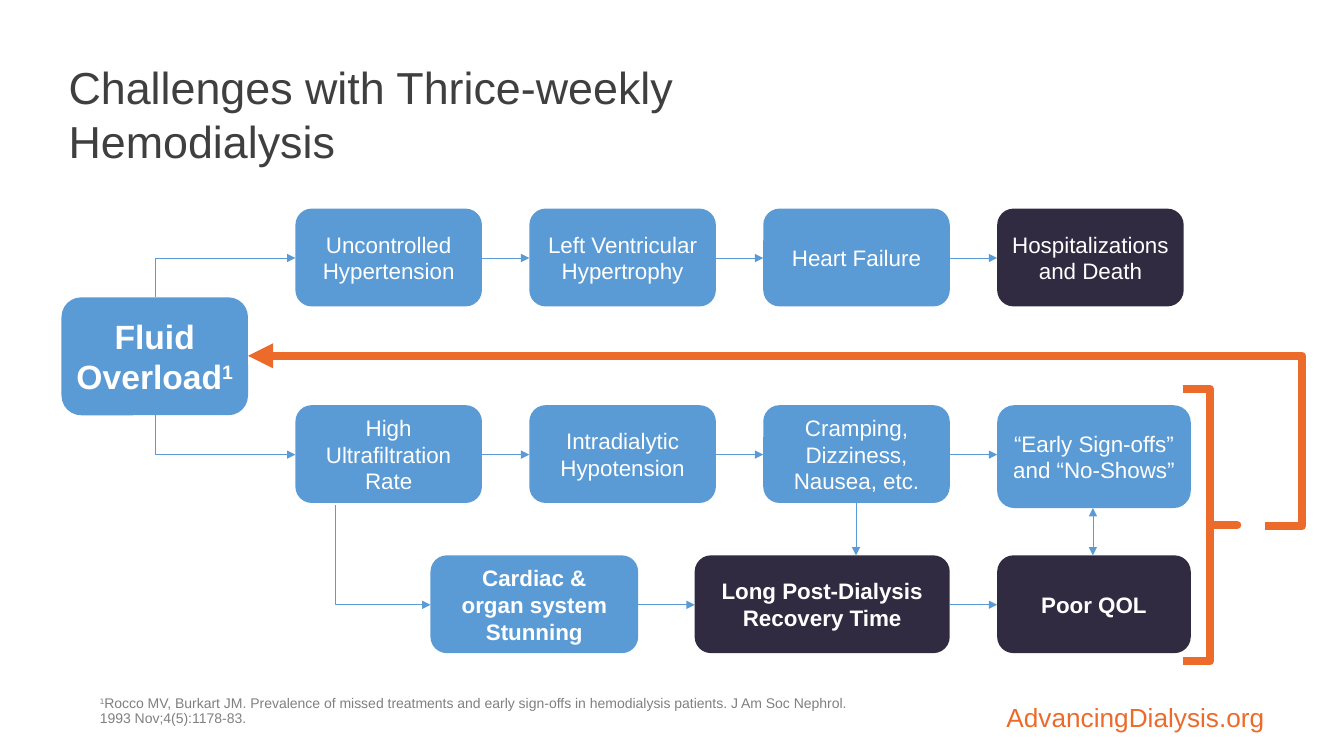
from lxml import etree
from pptx import Presentation
from pptx.dml.color import RGBColor
from pptx.enum import shapes, text
from pptx.oxml.ns import qn
from pptx.util import Inches, Pt

BLUE, DARK, ORANGE, WHITE = "5B9BD5", "312B42", "ED6B2A", "FFFFFF"
BOX_W, BOX_H, PITCH = 1.85, 0.97, 2.32


def rgb(value):
    return RGBColor.from_string(value)


def set_font(r, color, **formats):
    r.font.name = "Arial"
    r.font.color.rgb = rgb(color)
    for name, value in formats.items():
        setattr(r.font, name, value)


def add_runs(p, parts, color, **formats):
    """Add (text, is_superscript) runs to a paragraph."""
    for words, raised in parts:
        r = p.add_run()
        r.text = words
        set_font(r, color, **formats)
        if raised:
            r.font._element.set("baseline", "30000")


def format_frame(tf, anchor, side, edge):
    values = dict(word_wrap=True, vertical_anchor=anchor,
                  margin_left=Inches(side), margin_right=Inches(side),
                  margin_top=Inches(edge), margin_bottom=Inches(edge))
    for name, value in values.items():
        setattr(tf, name, value)


def add_box(s, x, y, w, h, label, fill=BLUE, bold=False, size=16, note=""):
    """Add a rounded box; \\n starts a paragraph and \\v breaks a line."""
    sp = s.shapes.add_shape(shapes.MSO_SHAPE.ROUNDED_RECTANGLE,
                            Inches(x), Inches(y), Inches(w), Inches(h))
    sp.shadow.inherit = False
    sp.fill.solid()
    sp.fill.fore_color.rgb = rgb(fill)
    sp.line.fill.background()
    tf = sp.text_frame
    format_frame(tf, text.MSO_ANCHOR.MIDDLE, 0, 0.05)
    tf.text = label
    for p in tf.paragraphs:
        p.alignment = text.PP_ALIGN.CENTER
        for r in p.runs:
            set_font(r, WHITE, size=Pt(size), bold=bold)
    if note:
        add_runs(p, [(note, True)], WHITE, size=Pt(size), bold=bold)


def add_arrow(s, x1, y1, x2, y2, color=BLUE, width=0.5,
              kind=shapes.MSO_CONNECTOR.STRAIGHT, ends=("tailEnd",)):
    c = s.shapes.add_connector(kind, Inches(x1), Inches(y1), Inches(x2), Inches(y2))
    c.line.color.rgb = rgb(color)
    c.line.width = Pt(width)
    ln = c.line._get_or_add_ln()
    for end in ends:
        etree.SubElement(ln, qn("a:" + end), type="triangle")
    etree.SubElement(c._element.spPr, qn("a:effectLst"))
    return c


def add_corner_arrow(s, x1, y1, x2, y2):
    """Run vertically from the start, then right to the end."""
    w, h = abs(y2 - y1), x2 - x1
    left, top = (x1 + x2 - w) / 2, (y1 + y2 - h) / 2
    c = add_arrow(s, left, top, left + w, top + h, kind=shapes.MSO_CONNECTOR.ELBOW)
    pr = c._element.spPr
    pr.find(qn("a:prstGeom")).set("prst", "bentConnector2")
    xfrm = pr.find(qn("a:xfrm"))
    xfrm.set("flipH", "1")
    if y2 > y1:
        xfrm.set("rot", "16200000")
    else:
        xfrm.set("rot", "5400000")
        xfrm.set("flipV", "1")


def add_flow(s, y, boxes):
    """Add a row of (x, width, height, label, formats) boxes joined by arrows."""
    for x, w, h, label, formats in boxes:
        add_box(s, x, y, w, h, label, **formats)
    for before, after in zip(boxes, boxes[1:]):
        add_arrow(s, before[0] + before[1], y + 0.49, after[0], y + 0.49)


def add_title(s, x, y, w, h):
    sp = s.shapes.title
    sp.left, sp.top, sp.width, sp.height = map(Inches, (x, y, w, h))
    tf = sp.text_frame
    format_frame(tf, text.MSO_ANCHOR.MIDDLE, 0.07, 0.04)
    p = tf.paragraphs[0]
    p.alignment = text.PP_ALIGN.LEFT
    add_runs(p, [("Challenges with Thrice-weekly Hemodialysis", False)],
             "3F3F3F", size=Pt(32))


def add_caption(s, x, y, w, h, parts, color, size, align, anchor, side, edge):
    sp = s.shapes.add_textbox(Inches(x), Inches(y), Inches(w), Inches(h))
    tf = sp.text_frame
    format_frame(tf, anchor, side, edge)
    p = tf.paragraphs[0]
    p.alignment = align
    p.line_spacing = 0.9
    add_runs(p, parts, color, size=Pt(size))


def add_feedback(s, x, y, w, h):
    """Add the bracket round the outcomes and the arrow back to fluid overload."""
    sp = s.shapes.add_shape(shapes.MSO_SHAPE.RIGHT_BRACE,
                            Inches(x), Inches(y), Inches(w), Inches(h))
    sp.shadow.inherit = False
    sp.fill.background()
    sp.line.color.rgb = rgb(ORANGE)
    sp.line.width = Pt(6)
    sp.adjustments[0], sp.adjustments[1] = 0, 0.5
    c = add_arrow(s, x + w + 0.28, y + h / 2 + 0.01, 2.46, 3.53, ORANGE, 6,
                  shapes.MSO_CONNECTOR.ELBOW)
    geom = c._element.spPr.find(qn("a:prstGeom"))
    av = geom.find(qn("a:avLst"))
    if av is None:
        av = etree.SubElement(geom, qn("a:avLst"))
    etree.SubElement(av, qn("a:gd"), name="adj1", fmla="val -3600")


def add_diagram(s, x, y):
    cols = [x + 2.32 + i * PITCH for i in range(4)]
    middle, bottom = y + 1.95, y + 3.44
    dark, strong = dict(fill=DARK), dict(fill=DARK, bold=True)
    add_box(s, x, y + 0.88, BOX_W, 1.17, "Fluid Overload", bold=True, size=24, note="1")
    heart = ["Uncontrolled\vHypertension", "Left Ventricular\vHypertrophy",
             "Heart Failure", "Hospitalizations\vand Death"]
    add_flow(s, y, [(cx, BOX_W, BOX_H, label, dark if cx == cols[-1] else {})
                    for cx, label in zip(cols, heart)])
    symptoms = ["High\vUltrafiltration Rate", "Intradialytic Hypotension",
                "Cramping,\vDizziness,\nNausea, etc."]
    add_flow(s, middle, [(cx, BOX_W, BOX_H, label, {})
                         for cx, label in zip(cols, symptoms)]
             + [(cols[3], 1.92, 1.02, "“Early Sign-offs”\vand “No-Shows”", {})])
    add_flow(s, bottom, [
        (x + 3.66, 2.06, BOX_H, "Cardiac &\norgan system\nStunning", dict(bold=True)),
        (x + 6.28, 2.53, BOX_H, "Long Post-Dialysis\vRecovery Time", strong),
        (cols[3], 1.92, BOX_H, "Poor QOL", strong)])
    add_corner_arrow(s, x + 0.93, y + 0.88, cols[0], y + 0.49)
    add_corner_arrow(s, x + 0.93, y + 2.05, cols[0], middle + 0.49)
    add_corner_arrow(s, x + 2.72, middle + 0.99, x + 3.66, bottom + 0.49)
    add_arrow(s, x + 7.88, middle + BOX_H, x + 7.88, bottom)
    add_arrow(s, x + 10.23, middle + 1.02, x + 10.23, bottom,
              ends=("headEnd", "tailEnd"))
    add_feedback(s, x + 11.12, y + 1.79, 0.54, 2.7)


def main():
    prs = Presentation()
    prs.slide_width, prs.slide_height = Inches(13.33), Inches(7.5)
    s = prs.slides.add_slide(prs.slide_layouts[5])
    add_title(s, 0.61, 0.4, 7.44, 1.45)
    add_diagram(s, 0.61, 2.07)
    citation = ("Rocco MV, Burkart JM. Prevalence of missed treatments and early "
                "sign-offs in hemodialysis patients. J Am Soc Nephrol. "
                "1993 Nov;4(5):1178-83.")
    add_caption(s, 0.92, 6.87, 7.57, 0.39, [("1", True), (citation, False)], "808080",
                10, text.PP_ALIGN.LEFT, text.MSO_ANCHOR.TOP, 0.07, 0.04)
    add_caption(s, 8.12, 6.66, 4.53, 0.61, [("AdvancingDialysis.org", False)], ORANGE,
                18.7, text.PP_ALIGN.RIGHT, text.MSO_ANCHOR.BOTTOM, 0.11, 0)
    prs.save("out.pptx")


if __name__ == "__main__":
    main()
